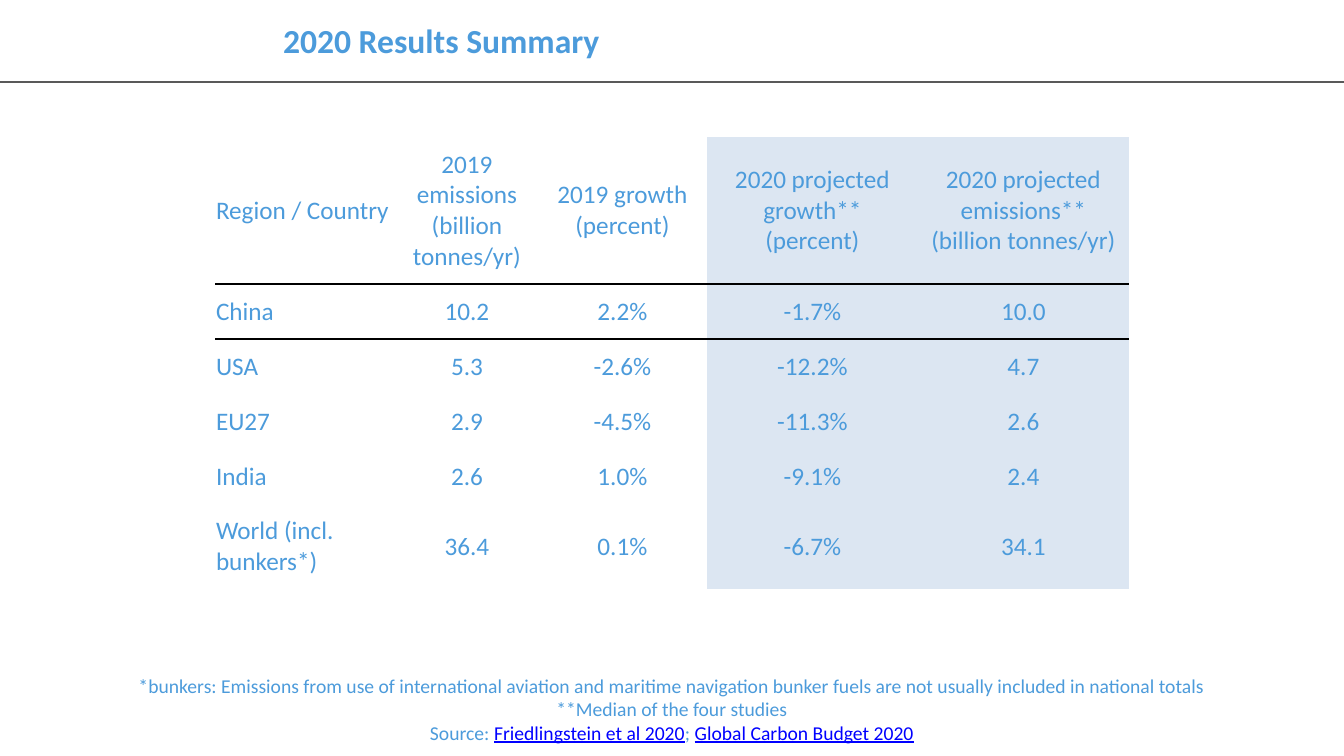
from lxml.etree import SubElement
from pptx import Presentation
from pptx.dml.color import RGBColor
from pptx.enum.shapes import MSO_CONNECTOR
from pptx.enum.text import MSO_ANCHOR, MSO_AUTO_SIZE, PP_ALIGN
from pptx.oxml import parse_xml
from pptx.oxml.ns import nsdecls, qn
from pptx.util import Pt

# Content
TITLE = "2020 Results Summary"
ROWS = [
    ("Region / Country", "2019 emissions (billion tonnes/yr)", "2019 growth (percent)",
     "2020 projected growth**\n(percent)", "2020 projected emissions**\n(billion tonnes/yr)"),
    ("China", "10.2", "2.2%", "-1.7%", "10.0"),
    ("USA", "5.3", "-2.6%", "-12.2%", "4.7"),
    ("EU27", "2.9", "-4.5%", "-11.3%", "2.6"),
    ("India", "2.6", "1.0%", "-9.1%", "2.4"),
    ("World (incl. bunkers*)", "36.4", "0.1%", "-6.7%", "34.1"),
]
# Each line is a list of (text, is_reference)
FOOTNOTE = [
    [("*bunkers: Emissions from use of international aviation and maritime navigation "
      "bunker fuels are not usually included in national totals", False)],
    [("**Median of the four studies", False)],
    [("Source: ", False), ("Friedlingstein et al 2020", True), ("; ", False),
     ("Global Carbon Budget 2020", True)],
]

# Geometry (px) and style
COL_WIDTHS = [181, 142, 169, 211, 211]
ROW_HEIGHTS = [146, 55, 55, 55, 55, 85]
FIRST_PROJECTED_COL = 3
FONT, BLUE, REFERENCE, SHADE = "Calibri", "4C9BDB", "0000FF", "DCE6F2"


def px(n):
    return round(n * 914400 / 100.8)


def rgb(value):
    return RGBColor.from_string(value)


def set_font(font, size, color=BLUE, bold=False):
    font.name, font.size, font.bold = FONT, Pt(size), bold
    font.color.rgb = rgb(color)


def add_border(cell, side):
    tcPr = cell._tc.get_or_add_tcPr()
    tcPr.insert(0, parse_xml(
        f'<a:{side} {nsdecls("a")} w="12700"><a:solidFill><a:srgbClr val="000000"/>'
        f'</a:solidFill></a:{side}>'))


prs = Presentation()
prs.slide_width, prs.slide_height = px(1344), px(756)
s = prs.slides.add_slide(prs.slide_layouts[5])

# Header rule
rule = s.shapes.add_connector(MSO_CONNECTOR.STRAIGHT, 0, px(82), px(1344), px(82))
rule.line.color.rgb = rgb("595959")
rule.line.width = Pt(0.75)
SubElement(rule._element.spPr, qn("a:effectLst"))

# Title
title = s.shapes.title
title.left, title.top, title.width, title.height = px(273), px(13), px(1071), px(55)
tf = title.text_frame
tf.text = TITLE
tf.auto_size = MSO_AUTO_SIZE.NONE
tf.vertical_anchor = MSO_ANCHOR.MIDDLE
tf.paragraphs[0].alignment = PP_ALIGN.LEFT
set_font(tf.paragraphs[0].font, 24, bold=True)

# Results table, without a built-in style
frame = s.shapes.add_table(len(ROWS), len(COL_WIDTHS), px(215), px(137),
                           px(sum(COL_WIDTHS)), px(sum(ROW_HEIGHTS)))
table = frame.table
table.horz_banding = False
table._tbl.tblPr.find(qn("a:tableStyleId")).text = "{2D5ABB26-0587-4C30-8999-92F81FD0307C}"
for column, width in zip(table.columns, COL_WIDTHS):
    column.width = px(width)
for row, height in zip(table.rows, ROW_HEIGHTS):
    row.height = px(height)

for i, values in enumerate(ROWS):
    for j, value in enumerate(values):
        cell = table.cell(i, j)
        cell.margin_left = cell.margin_right = px(1)
        cell.margin_top = cell.margin_bottom = px(12)
        cell.vertical_anchor = MSO_ANCHOR.MIDDLE
        p = cell.text_frame.paragraphs[0]
        p.text = value
        p.alignment = PP_ALIGN.CENTER if j else PP_ALIGN.LEFT
        set_font(p.font, 18)
        if j >= FIRST_PROJECTED_COL:
            cell.fill.solid()
            cell.fill.fore_color.rgb = rgb(SHADE)
        else:
            cell.fill.background()
        if i < 2:
            add_border(cell, "lnT" if i else "lnB")

# Footnote
tf = s.shapes.add_textbox(px(32), px(650), px(1280), px(99)).text_frame
tf.word_wrap = True
tf.vertical_anchor = MSO_ANCHOR.BOTTOM
p = tf.paragraphs[0]
p.alignment = PP_ALIGN.CENTER
set_font(p.font, 14)
for i, line in enumerate(FOOTNOTE):
    if i:
        p.add_line_break()
    for text, is_reference in line:
        r = p.add_run()
        r.text = text
        set_font(r.font, 14, REFERENCE if is_reference else BLUE)
        r.font.underline = is_reference

prs.save("out.pptx")
